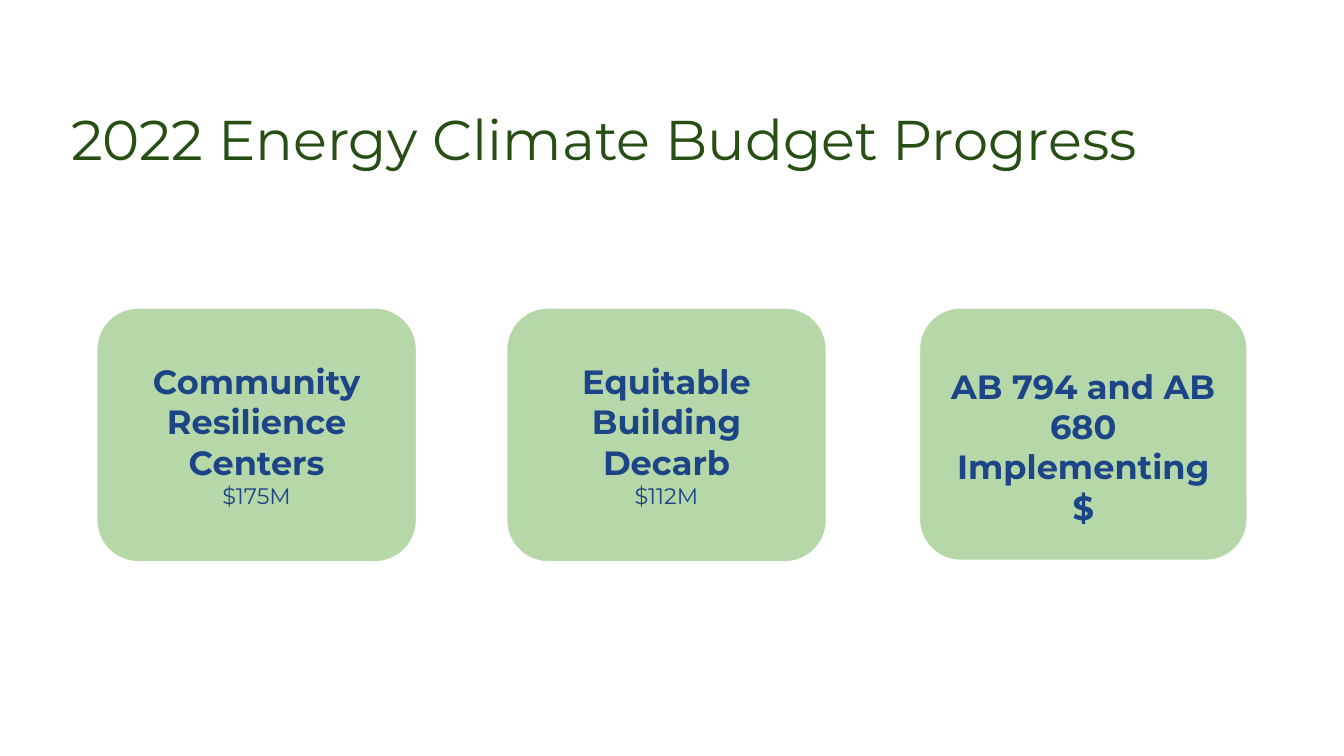
from pptx import Presentation
from pptx.dml.color import RGBColor
from pptx.enum.shapes import MSO_SHAPE as Shape
from pptx.enum.text import MSO_ANCHOR as Anchor, PP_ALIGN as Align
from pptx.util import Pt

FONT = "Montserrat"
DARK_GREEN, LIGHT_GREEN, BLUE, WHITE = "274E13", "B6D7A8", "1C4587", "FFFFFF"
INSET = 7.2
CARD_TOP = 164.2

HEADING = "2022 Energy Climate Budget Progress"
# program, amount, left, width, height, top inset
CARDS = [
    ("Community Resilience Centers", "$175M", 51.1, 172.8, 137.5, INSET),
    ("Equitable Building Decarb", "$112M", 270.7, 172.8, 137.5, INSET),
    ("AB 794 and AB 680 Implementing $", None, 491.8, 177.1, 136.8, 20),
]


def color(value):
    return RGBColor.from_string(value)


def set_frame(frame, anchor, top_inset=INSET):
    frame.word_wrap = True
    frame.vertical_anchor = anchor
    frame.margin_left = frame.margin_right = frame.margin_bottom = Pt(INSET)
    frame.margin_top = Pt(top_inset)


def add_run(paragraph, text, size, ink, bold=False):
    run = paragraph.add_run()
    run.text = text
    run.font.name = FONT
    run.font.size = Pt(size)
    run.font.bold = bold
    run.font.color.rgb = color(ink)


def add_card(slide, program, amount, left, width, height, top_inset):
    card = slide.shapes.add_shape(Shape.FLOWCHART_ALTERNATE_PROCESS,
                                  Pt(left), Pt(CARD_TOP), Pt(width), Pt(height))
    card.shadow.inherit = False
    card.fill.solid()
    card.fill.fore_color.rgb = color(LIGHT_GREEN)
    card.line.color.rgb = color(WHITE)
    card.line.width = Pt(2.25)

    frame = card.text_frame
    set_frame(frame, Anchor.MIDDLE, top_inset)
    add_run(frame.paragraphs[0], program, 18, BLUE, bold=True)
    if amount:
        add_run(frame.add_paragraph(), amount, 12, BLUE)
    for paragraph in frame.paragraphs:
        paragraph.alignment = Align.CENTER


def main():
    deck = Presentation()
    deck.slide_width, deck.slide_height = Pt(720), Pt(405)
    slide = deck.slides.add_slide(deck.slide_layouts[6])

    heading = slide.shapes.add_textbox(Pt(31), Pt(33.8), Pt(669.6), Pt(65.5))
    set_frame(heading.text_frame, Anchor.BOTTOM)
    add_run(heading.text_frame.paragraphs[0], HEADING, 30, DARK_GREEN)

    for card in CARDS:
        add_card(slide, *card)

    deck.save("out.pptx")


if __name__ == "__main__":
    main()
